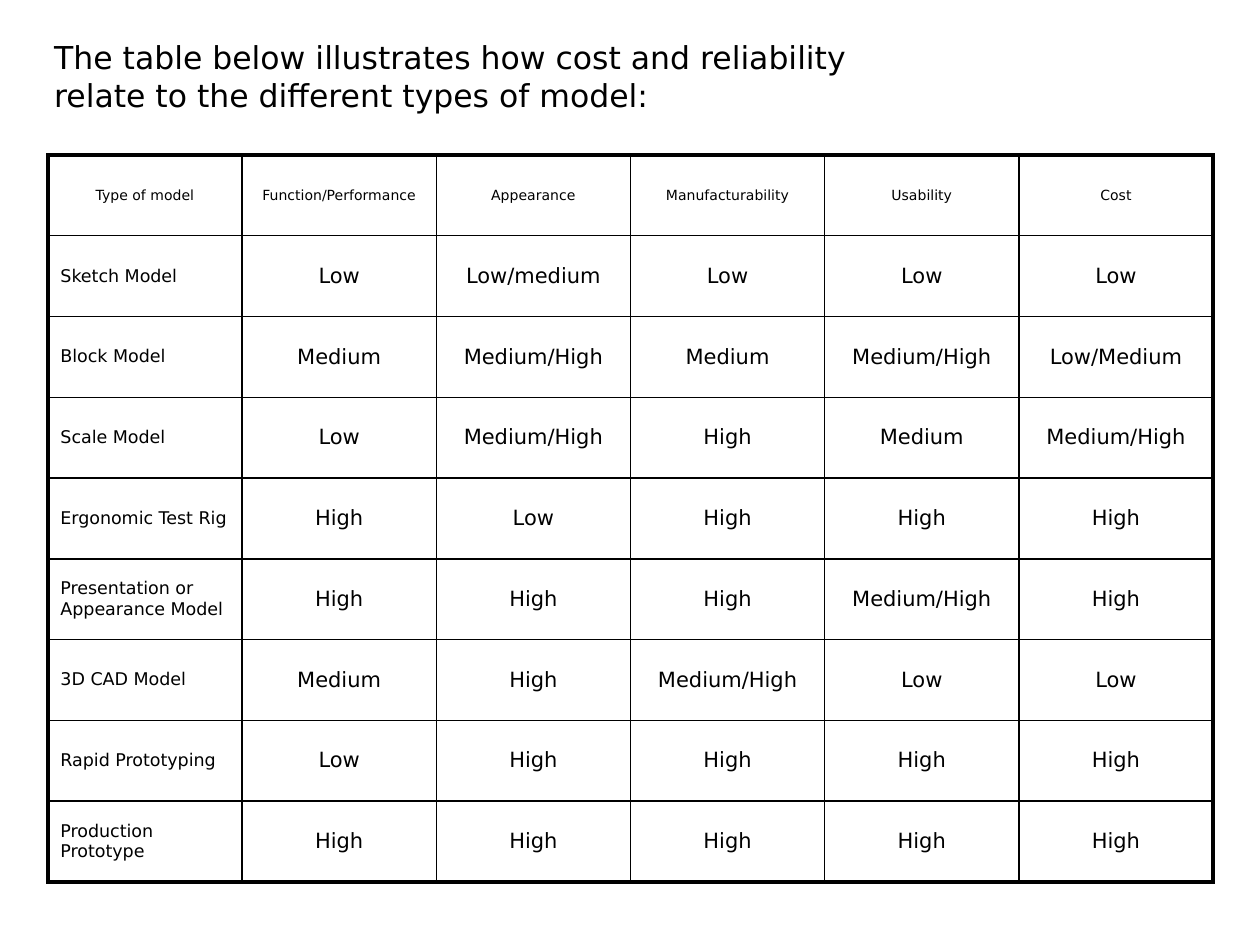
from dataclasses import dataclass

from lxml import etree
from pptx import Presentation
from pptx import util as u
from pptx.dml.color import RGBColor
from pptx.enum import text
from pptx.oxml import ns


@dataclass(frozen=True)
class Theme:
    """Hold the colours, font, type sizes and border widths."""
    ink: str = "000000"
    font: str = "DejaVu Sans"
    title: float = 18
    heading: float = 8
    model: float = 10
    rating: float = 12
    frame: float = 2.25
    rule: float = 1


THEME = Theme()
TITLE = "The table below illustrates how cost and reliability relate to the different types of model:"
RATINGS = [
    ["Type of model", "Function/Performance", "Appearance", "Manufacturability", "Usability", "Cost"],
    ["Sketch Model", "Low", "Low/medium", "Low", "Low", "Low"],
    ["Block Model", "Medium", "Medium/High", "Medium", "Medium/High", "Low/Medium"],
    ["Scale Model", "Low", "Medium/High", "High", "Medium", "Medium/High"],
    ["Ergonomic Test Rig", "High", "Low", "High", "High", "High"],
    ["Presentation or Appearance Model", "High", "High", "High", "Medium/High", "High"],
    ["3D CAD Model", "Medium", "High", "Medium/High", "Low", "Low"],
    ["Rapid Prototyping", "Low", "High", "High", "High", "High"],
    ["Production Prototype", "High", "High", "High", "High", "High"],
]


def write(frame, words, size, align):
    """Write one formatted run into a text frame."""
    paragraph = frame.paragraphs[0]
    paragraph.alignment = align
    run = paragraph.add_run()
    run.text = words
    run.font.name = THEME.font
    run.font.size = u.Pt(size)
    run.font.color.rgb = RGBColor.from_string(THEME.ink)


def set_borders(cell, widths):
    """Draw the left, right, top and bottom borders of a cell."""
    properties = cell._tc.get_or_add_tcPr()
    for position, (side, width) in enumerate(zip("LRTB", widths)):
        line = etree.Element(ns.qn(f"a:ln{side}"), w=str(u.Pt(width)))
        fill = etree.SubElement(line, ns.qn("a:solidFill"))
        etree.SubElement(fill, ns.qn("a:srgbClr"), val=THEME.ink)
        properties.insert(position, line)


def add_title(slide, left, top, width, height):
    """Place the introductory sentence in the title placeholder."""
    title = slide.shapes.title
    title.left, title.top, title.width, title.height = left, top, width, height
    frame = title.text_frame
    frame.word_wrap = True
    frame.auto_size = text.MSO_AUTO_SIZE.NONE
    frame.vertical_anchor = text.MSO_ANCHOR.TOP
    write(frame, TITLE, THEME.title, text.PP_ALIGN.LEFT)


def add_ratings(slide, left, top, width, height):
    """Place the table of model types and their ratings."""
    last_row, last_column = len(RATINGS) - 1, len(RATINGS[0]) - 1
    table = slide.shapes.add_table(last_row + 1, last_column + 1, left, top, width, height).table
    table.first_row = table.horz_banding = False
    for r, ratings in enumerate(RATINGS):
        for c, words in enumerate(ratings):
            cell = table.cell(r, c)
            cell.fill.background()
            cell.vertical_anchor = text.MSO_ANCHOR.MIDDLE
            size = THEME.heading if r == 0 else THEME.model if c == 0 else THEME.rating
            align = text.PP_ALIGN.LEFT if r and c == 0 else text.PP_ALIGN.CENTER
            write(cell.text_frame, words, size, align)
            outer = (c == 0, c == last_column, r == 0, r == last_row)
            set_borders(cell, [THEME.frame if edge else THEME.rule for edge in outer])


def main():
    """Build and save the slide."""
    deck = Presentation()
    deck.slide_width, deck.slide_height = u.Inches(10), u.Inches(7.5)
    slide = deck.slides.add_slide(deck.slide_layouts[5])
    add_title(slide, u.Inches(0.33), u.Inches(0.25), u.Inches(6.83), u.Inches(0.7))
    add_ratings(slide, u.Inches(0.38), u.Inches(1.23), u.Inches(9.25), u.Inches(5.77))
    deck.save("out.pptx")


if __name__ == "__main__":
    main()
